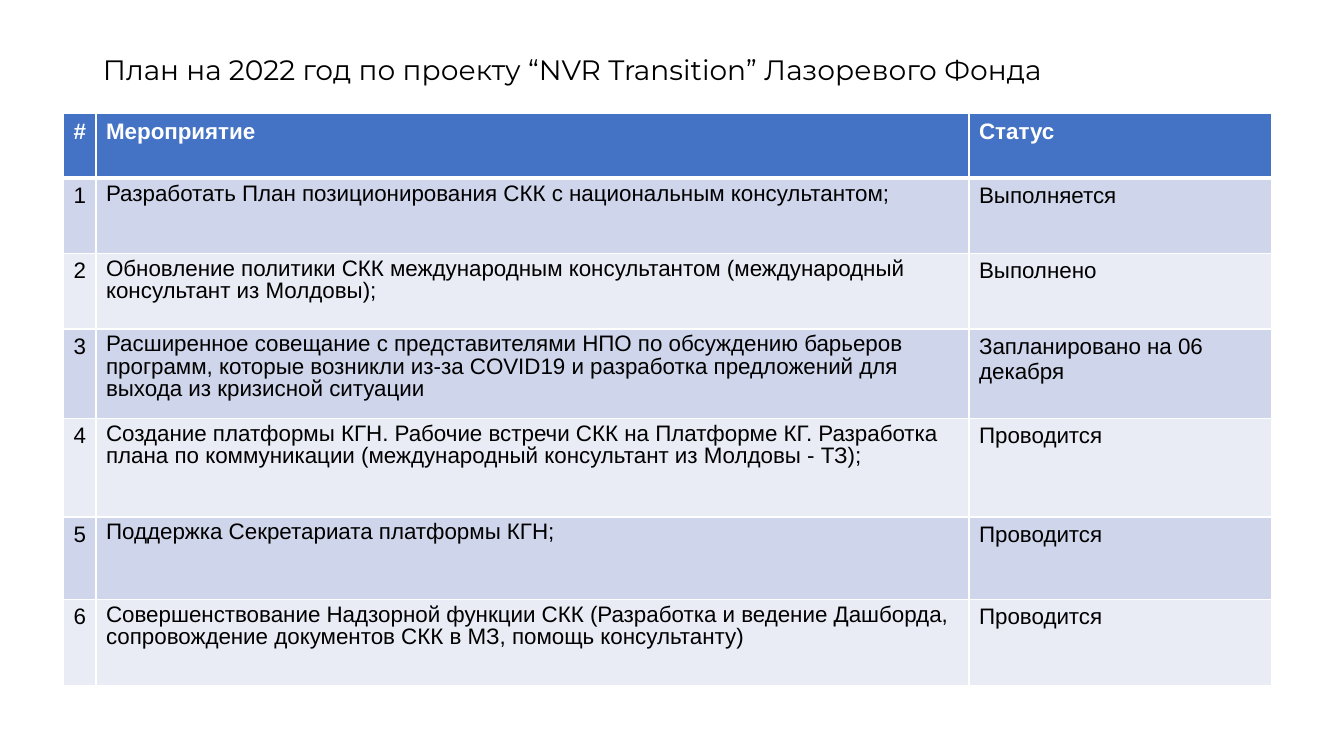
from dataclasses import dataclass

from lxml.etree import SubElement
from pptx import Presentation
from pptx.dml.color import RGBColor as RGB
from pptx.enum.text import MSO_ANCHOR as Anchor, PP_ALIGN as Align
from pptx.oxml.ns import qn
from pptx.slide import Slide
from pptx.table import _Cell as Cell
from pptx.text.text import TextFrame
from pptx.util import Cm, Pt

COLORS = {
    "header": "4472C4",
    "odd": "CFD5EA",
    "even": "E9EBF5",
    "white": "FFFFFF",
    "black": "000000",
}


@dataclass
class Activity:
    name: str
    status: str
    height: float


HEADINGS = ("#", "Мероприятие", "Статус")
HEADER_HEIGHT = 1.62
COLUMN_WIDTHS = (0.82, 22, 7.62)
ACTIVITIES = (
    Activity("Разработать План позиционирования СКК с национальным консультантом;",
             "Выполняется", 1.9),
    Activity("Обновление политики СКК международным консультантом "
             "(международный консультант из Молдовы);",
             "Выполнено", 1.9),
    Activity("Расширенное совещание с представителями НПО по обсуждению барьеров "
             "программ, которые возникли из-за COVID19 и разработка предложений "
             "для выхода из кризисной ситуации",
             "Запланировано на 06 декабря", 2.26),
    Activity("Создание платформы КГН. Рабочие встречи СКК на Платформе КГ. "
             "Разработка плана по коммуникации (международный консультант из "
             "Молдовы - ТЗ);",
             "Проводится", 2.48),
    Activity("Поддержка Секретариата платформы КГН;", "Проводится", 2.07),
    Activity("Совершенствование Надзорной функции СКК (Разработка и ведение "
             "Дашборда, сопровождение документов СКК в МЗ, помощь консультанту)",
             "Проводится", 2.18),
)


def write(tf: TextFrame, text: str, *, size: float = 16, font: str = "Arial",
          color: str = "black", bold: bool = False, spacing: float = 1,
          before: float = 0) -> None:
    tf.word_wrap = True
    p = tf.paragraphs[0]
    p.alignment = Align.LEFT
    p.line_spacing = spacing
    p.space_before = Pt(before)
    r = p.add_run()
    r.text = text
    r.font.size = Pt(size)
    r.font.name = font
    r.font.bold = bold
    r.font.color.rgb = RGB.from_string(COLORS[color])


def format_cell(cell: Cell, fill: str, top: float, bottom: float) -> None:
    """Draw white borders, given in points, then fill the cell."""
    tc_pr = cell._tc.get_or_add_tcPr()
    for side, width in (("L", 1), ("R", 1), ("T", top), ("B", bottom)):
        ln = SubElement(tc_pr, qn(f"a:ln{side}"), w=str(Pt(width)))
        solid = SubElement(ln, qn("a:solidFill"))
        SubElement(solid, qn("a:srgbClr"), val=COLORS["white"])
    cell.fill.solid()
    cell.fill.fore_color.rgb = RGB.from_string(COLORS[fill])


def add_title(s: Slide, text: str) -> None:
    title = s.shapes.title
    title.left, title.top = Cm(2.34), Cm(1.02)
    title.width, title.height = Cm(29.2), Cm(1.55)
    title.text_frame.vertical_anchor = Anchor.MIDDLE
    write(title.text_frame, text, size=20, font="Montserrat", spacing=0.9)


def add_plan(s: Slide) -> None:
    heights = [HEADER_HEIGHT] + [a.height for a in ACTIVITIES]
    table = s.shapes.add_table(
        len(heights), len(COLUMN_WIDTHS), Cm(1.6), Cm(2.87),
        Cm(sum(COLUMN_WIDTHS)), Cm(sum(heights))).table
    for column, width in zip(table.columns, COLUMN_WIDTHS):
        column.width = Cm(width)
    for row, height in zip(table.rows, heights):
        row.height = Cm(height)

    for cell, heading in zip(table.rows[0].cells, HEADINGS):
        format_cell(cell, "header", top=1, bottom=3)
        write(cell.text_frame, heading, color="white", bold=True)

    for number, activity in enumerate(ACTIVITIES, 1):
        cells = list(table.rows[number].cells)
        for cell in cells:
            format_cell(cell, "odd" if number % 2 else "even",
                        top=3 if number == 1 else 1, bottom=1)
        write(cells[0].text_frame, str(number))
        write(cells[1].text_frame, activity.name, spacing=0.9, before=10)
        write(cells[2].text_frame, activity.status)


def main() -> None:
    prs = Presentation()
    prs.slide_width, prs.slide_height = Cm(33.87), Cm(19.05)
    s = prs.slides.add_slide(prs.slide_layouts.get_by_name("Title Only"))
    add_title(s, "План на 2022 год по проекту “NVR Transition” Лазоревого Фонда")
    add_plan(s)
    prs.save("out.pptx")


if __name__ == "__main__":
    main()
